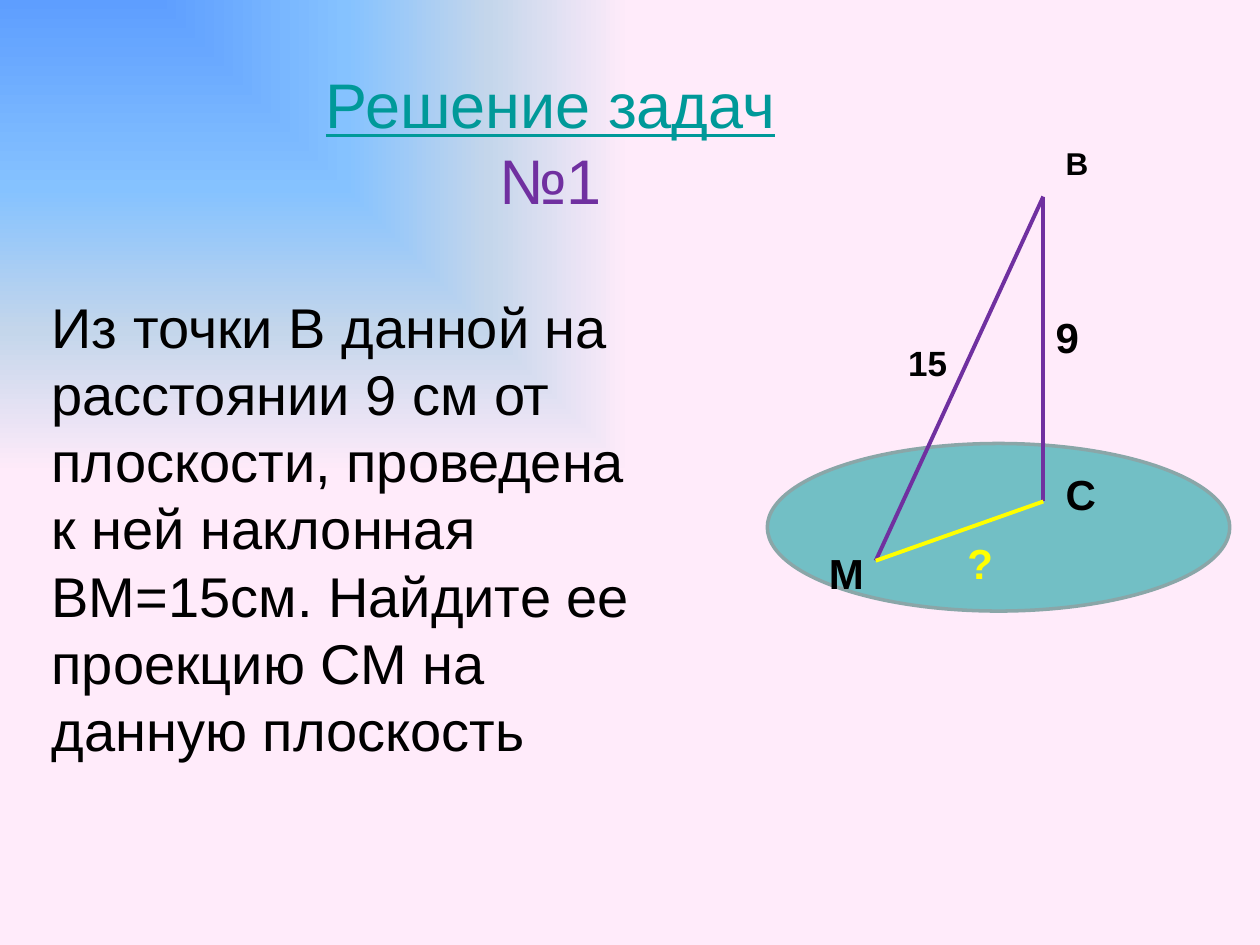
from pptx import Presentation
from pptx.dml.color import RGBColor
from pptx.enum.shapes import MSO_CONNECTOR as Connector, MSO_SHAPE as Preset
from pptx.enum.text import MSO_ANCHOR as Anchor, MSO_AUTO_SIZE as AutoSize, PP_ALIGN as Align
from pptx.oxml import parse_xml
from pptx.oxml.ns import nsdecls
from pptx.util import Inches, Pt

COLORS = {
    "text": "000000", "title": "009999", "purple": "7030A0", "yellow": "FFFF00",
    "plane": "72BFC5", "rim": "8AA6A8",
}
BACKGROUND_STOPS = {0: "5E9EFF", 40: "85C2FF", 70: "C4D6EB", 100: "FFEBFA"}
COLUMNS, ROWS = 100, 75
PROBLEM = ("Из точки В данной на расстоянии 9 см от плоскости, проведена к ней "
           "наклонная ВМ=15см. Найдите ее проекцию СМ на данную плоскость")


class SlideBuilder:
    """Builds one slide on a grid of columns and rows in a single style."""

    def __init__(self, presentation):
        self.column = presentation.slide_width / COLUMNS
        self.row = presentation.slide_height / ROWS
        self.slide = presentation.slides.add_slide(presentation.slide_layouts[1])
        self.figure = self.slide.shapes.add_group_shape()

    def point(self, column, row):
        return round(column * self.column), round(row * self.row)

    def box(self, left, top, width, height):
        return *self.point(left, top), *self.point(width, height)

    def color(self, name):
        return RGBColor.from_string(COLORS[name])

    def background(self, stops):
        marks = "".join(
            f'<a:gs pos="{share * 1000}"><a:srgbClr val="{color}"/></a:gs>'
            for share, color in stops.items())
        self.slide.background.fill.solid()
        properties = self.slide.background.fill._xPr
        properties.replace(properties[0], parse_xml(
            f'<a:gradFill {nsdecls("a")} rotWithShape="1"><a:gsLst>{marks}</a:gsLst>'
            '<a:path path="rect"><a:fillToRect r="100000" b="100000"/></a:path></a:gradFill>'))

    def add_text(self, paragraph, text, color, size, **style):
        run = paragraph.add_run()
        run.text = text
        run.font.color.rgb = self.color(color)
        for name, value in {"name": "Arial", "size": Pt(size), **style}.items():
            setattr(run.font, name, value)

    def placeholder(self, index, box, lines, size, align):
        shape = self.slide.placeholders[index]
        shape.left, shape.top, shape.width, shape.height = self.box(*box)
        frame = shape.text_frame
        frame.auto_size, frame.vertical_anchor = AutoSize.NONE, Anchor.TOP
        for number, (text, color, underline) in enumerate(lines):
            paragraph = frame.add_paragraph() if number else frame.paragraphs[0]
            paragraph.alignment, paragraph.space_before = align, Pt(0)
            properties = paragraph._p.get_or_add_pPr()
            properties.set("marL", "0")
            properties.set("indent", "0")
            properties.append(parse_xml(f'<a:buNone {nsdecls("a")}/>'))
            self.add_text(paragraph, text, color, size, underline=underline)

    def ellipse(self, box, fill, line, width):
        shape = self.figure.shapes.add_shape(Preset.OVAL, *self.box(*box))
        shape.shadow.inherit = False
        shape.fill.solid()
        shape.fill.fore_color.rgb = self.color(fill)
        shape.line.color.rgb = self.color(line)
        shape.line.width = Pt(width)

    def segment(self, start, end, color):
        connector = self.figure.shapes.add_connector(
            Connector.STRAIGHT, *self.point(*start), *self.point(*end))
        connector.line.color.rgb = self.color(color)
        connector.line.width = Pt(2.25)
        connector._element.spPr.append(parse_xml(f'<a:effectLst {nsdecls("a")}/>'))

    def label(self, text, box, size=24, color="text"):
        frame = self.figure.shapes.add_textbox(*self.box(*box)).text_frame
        frame.word_wrap, frame.auto_size = False, AutoSize.SHAPE_TO_FIT_TEXT
        self.add_text(frame.paragraphs[0], text, color, size, bold=True)


def main():
    presentation = Presentation()
    presentation.slide_width, presentation.slide_height = Inches(10), Inches(7.5)
    builder = SlideBuilder(presentation)
    builder.background(BACKGROUND_STOPS)
    builder.placeholder(0, (18.7, 4.7, 50, 13.1), [
        ("Решение задач", "title", True), ("№1", "purple", False)], 36, Align.CENTER)
    builder.placeholder(1, (3.1, 22.7, 50, 38.7), [(PROBLEM, "text", False)], 32, Align.LEFT)

    builder.ellipse((60.9, 35.2, 36.7, 13.3), "plane", "rim", 2)
    point_b, point_c, point_m = (82.8, 15.6), (82.8, 39.8), (69.5, 44.5)
    builder.segment(point_b, point_c, "purple")
    builder.segment(point_b, point_m, "purple")
    builder.segment(point_c, point_m, "yellow")

    builder.label("В", (83.6, 10.9, 3.8, 4), size=18)
    builder.label("М", (64.8, 43, 4.8, 5))
    builder.label("С", (83.6, 36.7, 4.5, 5))
    builder.label("9", (82.8, 24.2, 3.9, 5))
    builder.label("15", (71.1, 26.6, 5.1, 4.4), size=20)
    builder.label("?", (75.8, 42.2, 4.1, 5), color="yellow")
    presentation.save("out.pptx")


if __name__ == "__main__":
    main()
